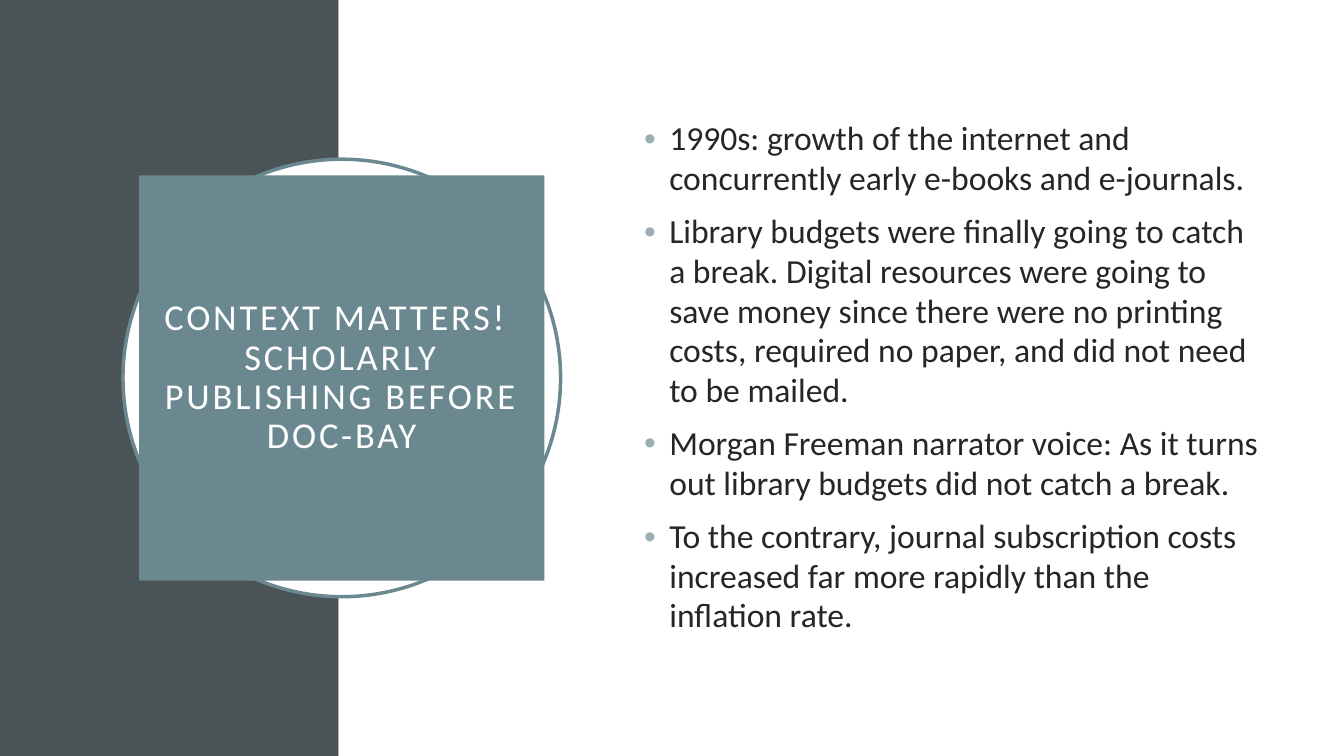
from lxml import etree
from pptx import Presentation
from pptx.dml.color import RGBColor
from pptx.enum.shapes import MSO_SHAPE
from pptx.enum.text import MSO_ANCHOR, MSO_AUTO_SIZE, PP_ALIGN
from pptx.oxml.ns import qn
from pptx.util import Inches, Pt

RECT, OVAL = MSO_SHAPE.RECTANGLE, MSO_SHAPE.OVAL
MIDDLE, NO_FIT, CENTER = MSO_ANCHOR.MIDDLE, MSO_AUTO_SIZE.NONE, PP_ALIGN.CENTER
FONT = "Calibri"
SLATE, TEAL, PALE, WHITE, INK = "4A5356", "6B8891", "9BAFB5", "FFFFFF", "262626"
TITLE = "CONTEXT MATTERS! \vSCHOLARLY PUBLISHING BEFORE DOC-BAY"
POINTS = [
    "1990s: growth of the internet and concurrently early e-books and e-journals.",
    "Library budgets were finally going to catch a break. Digital resources were "
    "going to save money since there were no printing costs, required no paper, "
    "and did not need to be mailed.",
    "Morgan Freeman narrator voice: As it turns out library budgets did not catch a break.",
    "To the contrary, journal subscription costs increased far more rapidly than "
    "the inflation rate.",
]


def rgb(value):
    """Return the colour for a hex string."""
    return RGBColor.from_string(value)


def add_filled(s, kind, box, fill, line=None):
    """Add a flat shape with an optional outline."""
    sp = s.shapes.add_shape(kind, *map(Inches, box))
    sp.shadow.inherit = False
    sp.fill.solid()
    sp.fill.fore_color.rgb = rgb(fill)
    if line:
        sp.line.color.rgb = rgb(line)
        sp.line.width = Pt(2.5)
    else:
        sp.line.fill.background()


def format_runs(p, size, color):
    """Set font, size and colour on the runs of a paragraph."""
    for r in p.runs:
        r.font.name = FONT
        r.font.size = Pt(size)
        r.font.color.rgb = rgb(color)


def add_bullet(p, indent):
    """Give a paragraph a hanging pale bullet."""
    pPr = p._p.get_or_add_pPr()
    pPr.set("marL", str(Inches(indent)))
    pPr.set("indent", str(-Inches(indent)))
    color = etree.SubElement(pPr, qn("a:buClr"))
    etree.SubElement(color, qn("a:srgbClr"), val=PALE)
    etree.SubElement(pPr, qn("a:buFont"), typeface="Arial")
    etree.SubElement(pPr, qn("a:buChar"), char="•")


def add_title_badge(s, box):
    """Draw the ring and centre the title square in it."""
    x, y, size = box
    gap = 0.16
    add_filled(s, OVAL, (x, y, size, size), WHITE, TEAL)
    title = s.shapes.title
    s.shapes.element.append(title.element)
    title.left, title.top = Inches(x + gap), Inches(y + gap)
    title.width = title.height = Inches(size - 2 * gap)
    title.fill.solid()
    title.fill.fore_color.rgb = rgb(TEAL)
    tf = title.text_frame
    tf.text = TITLE
    tf.word_wrap = True
    tf.auto_size = NO_FIT
    tf.vertical_anchor = MIDDLE
    tf.margin_left = tf.margin_right = tf.margin_top = tf.margin_bottom = Inches(0.2)
    p = tf.paragraphs[0]
    p.alignment = CENTER
    p.line_spacing = 0.9
    format_runs(p, 26, WHITE)
    for r in p.runs:
        r.font._element.set("spc", "200")


def add_points(s, box):
    """Write the bulleted points, centred vertically in the box."""
    tf = s.shapes.add_textbox(*map(Inches, box)).text_frame
    tf.word_wrap = True
    tf.vertical_anchor = MIDDLE
    for i, text in enumerate(POINTS):
        p = tf.add_paragraph() if i else tf.paragraphs[0]
        p.text = text
        p.space_before = Pt(10)
        p.line_spacing = 0.98
        add_bullet(p, 0.25)
        format_runs(p, 24, INK)


def main():
    """Build and save the slide."""
    prs = Presentation()
    prs.slide_width, prs.slide_height = Inches(13.33), Inches(7.5)
    s = prs.slides.add_slide(prs.slide_layouts[5])
    add_filled(s, RECT, (0, 0, 3.36, 7.5), SLATE)
    add_filled(s, RECT, (3.36, 0, 9.97, 7.5), WHITE)
    add_title_badge(s, (1.22, 1.58, 4.34))
    add_points(s, (6.29, 1.06, 6.36, 5.37))
    prs.save("out.pptx")


if __name__ == "__main__":
    main()
